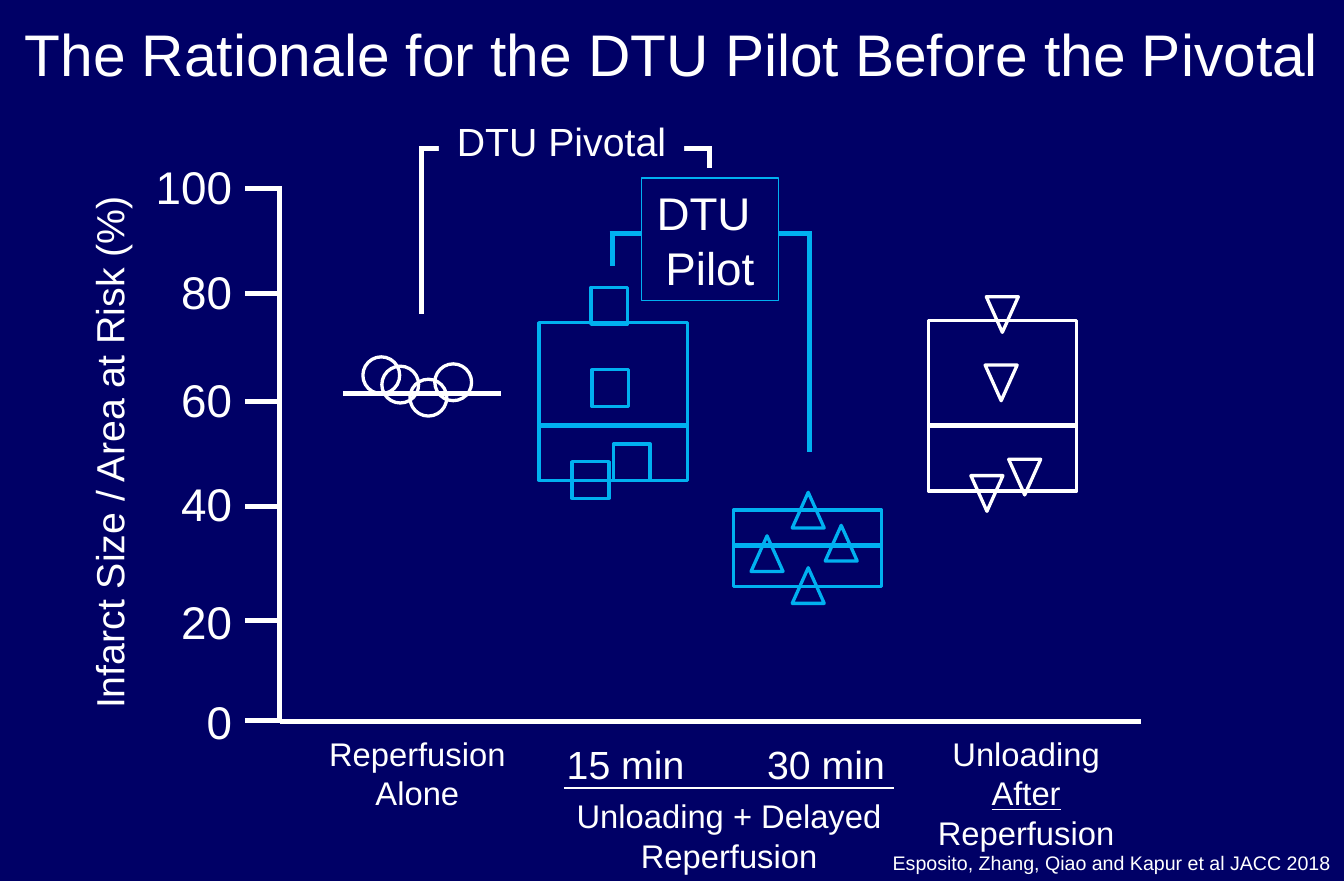
from lxml.etree import SubElement
from pptx import Presentation
from pptx.dml.color import RGBColor
from pptx.enum.shapes import MSO_CONNECTOR, MSO_SHAPE as Preset
from pptx.enum.text import MSO_AUTO_SIZE as AutoSize, PP_ALIGN as Align
from pptx.oxml.ns import qn
from pptx.util import Pt

COLORS = {"navy": "000066", "white": "FFFFFF", "cyan": "00B0F0"}


def rgb(name):
    return RGBColor.from_string(COLORS[name])


def write(frame, text, size=20, align=Align.CENTER, color="white",
          underlined="", wrap=True):
    """Fill a text frame, one paragraph per line of text."""
    frame.word_wrap = wrap
    frame.auto_size = AutoSize.SHAPE_TO_FIT_TEXT
    for index, line in enumerate(text.split("\n")):
        paragraph = frame.add_paragraph() if index else frame.paragraphs[0]
        paragraph.alignment = align
        pieces = line.partition(underlined) if underlined else (line,)
        for piece in filter(None, pieces):
            run = paragraph.add_run()
            run.text = piece
            run.font.name = "Arial"
            run.font.size = Pt(size)
            run.font.color.rgb = rgb(color)
            if piece == underlined:
                run.font.underline = True


def add_text(slide, box, text, rotation=0, **text_format):
    label = slide.shapes.add_textbox(*map(Pt, box))
    label.rotation = rotation
    write(label.text_frame, text, **text_format)


def add_line(slide, start, end, color="white", weight=3):
    line = slide.shapes.add_connector(
        MSO_CONNECTOR.STRAIGHT, *map(Pt, (*start, *end)))
    line.line.color.rgb = rgb(color)
    line.line.width = Pt(weight)
    SubElement(line._element.spPr, qn("a:effectLst"))


def add_outline(slide, preset, box, color=None, weight=2, fill=None):
    shape = slide.shapes.add_shape(preset, *map(Pt, box))
    shape.shadow.inherit = False
    if fill:
        shape.fill.solid()
        shape.fill.fore_color.rgb = rgb(fill)
    else:
        shape.fill.background()
    if color:
        shape.line.color.rgb = rgb(color)
        shape.line.width = Pt(weight)
    else:
        shape.line.fill.background()
    return shape


def add_axes(slide, box):
    left, top, width, height = box
    bottom = top + height
    add_line(slide, (left, top), (left, bottom))
    add_line(slide, (left, bottom), (left + width, bottom))
    ticks = [("100", 1.5, 0), ("80", 65.5, 0), ("60", 131.5, 0),
             ("40", 195.5, 0), ("20", 265.5, 2), ("0", 326.5, 2)]
    for value, offset, label_drop in ticks:
        y = top + offset
        add_line(slide, (left - 21, y), (left, y))
        add_text(slide, (left - 84, y + label_drop - 22, 62, 41), value,
                 size=28, align=Align.RIGHT)
    title_width, title_height = 342, 36
    add_text(slide, (left - 104.5 - title_width / 2, top + 155.5 - title_height / 2,
                     title_width, title_height),
             "Infarct Size / Area at Risk (%)", rotation=270, size=24, align=Align.LEFT)


def add_treatment(slide, box, median, preset, marker_size, offsets,
                  color="white", flipped=False):
    """Draw a range box, its median line and the single observations."""
    left, top, width, height = box
    if height:
        add_outline(slide, Preset.RECTANGLE, box, color)
    add_line(slide, (left, top + median), (left + width, top + median), color)
    for dx, dy in offsets:
        marker = add_outline(slide, preset, (left + dx, top + dy, *marker_size), color)
        marker.rotation = 180 if flipped else 0


def add_comparison(slide, box, text, size, left, right, y, drops, color, border=None):
    """Join two treatments with a bracket that carries a label box."""
    add_line(slide, (left - 1.5, y), (right + 1.5, y), color)
    for x, drop in zip((left, right), drops):
        add_line(slide, (x, y), (x, y + drop), color)
    label = add_outline(slide, Preset.RECTANGLE, box, border, 0.75, fill="navy")
    write(label.text_frame, text, size=size)


def add_treatment_labels(slide, box):
    left, top, width, height = box
    labels = [
        (84.3, 0, 123, "Reperfusion\nAlone", 20, ""),
        (211.7, 3.6, 94, "15 min", 24, ""),
        (334.3, 3.6, 87, "30 min", 24, ""),
        (456.7, 0, 152, "Unloading After\nReperfusion", 20, "After"),
        (275, 38, 251, "Unloading + Delayed\nReperfusion", 20, ""),
    ]
    for center, dy, label_width, text, size, underlined in labels:
        add_text(slide, (left + center - label_width / 2, top + dy, label_width, height),
                 text, size=size, underlined=underlined)
    add_line(slide, (left + 174, top + 36.7), (left + 376, top + 36.7), weight=1.5)


def main():
    deck = Presentation()
    deck.slide_width, deck.slide_height = Pt(822.12), Pt(538.63)
    slide = deck.slides.add_slide(deck.slide_layouts[6])
    slide.background.fill.solid()
    slide.background.fill.fore_color.rgb = rgb("navy")

    add_text(slide, (0, 7.2, 822, 51),
             "The Rationale for the DTU Pilot Before the Pivotal", size=35.9)
    add_axes(slide, (171, 114, 527, 327))

    square, triangle = (22.5, 22.5), (19.6, 21.8)
    add_treatment(slide, (209.8, 240.5, 96.5, 0), 0, Preset.OVAL, square,
                  [(12.2, -22.3), (23.8, -16.6), (41, -8.6), (56.2, -18)])
    add_treatment(slide, (329.8, 197.3, 90.7, 96.5), 62.6, Preset.RECTANGLE, square,
                  [(31.7, -21.6), (32.4, 28.8), (45.4, 74.2), (20.2, 85)], "cyan")
    add_treatment(slide, (448.6, 311.8, 90.7, 46.8), 21.6,
                  Preset.ISOSCELES_TRIANGLE, triangle,
                  [(36, -10.8), (10.8, 15.8), (56.2, 9.4), (36, 35.3)], "cyan")
    add_treatment(slide, (568, 195.8, 90.7, 104.4), 64.1,
                  Preset.ISOSCELES_TRIANGLE, triangle,
                  [(35.3, -14.4), (34.6, 27.4), (25.9, 95), (49, 85)], flipped=True)
    add_treatment_labels(slide, (171, 445.2, 527, 55))

    add_comparison(slide, (268.5, 68.4, 150, 36), "DTU Pivotal", 24,
                   257.8, 434, 90.7, (101, 12.3), "white")
    add_comparison(slide, (392.4, 108.9, 83.7, 74.9), "DTU \nPilot", 28,
                   374.4, 495, 142.6, (20, 134), "cyan", border="cyan")
    add_text(slide, (539, 517, 283, 21.5),
             "Esposito, Zhang, Qiao and Kapur et al JACC 2018",
             size=12, align=Align.LEFT, wrap=False)
    deck.save("out.pptx")


if __name__ == "__main__":
    main()
